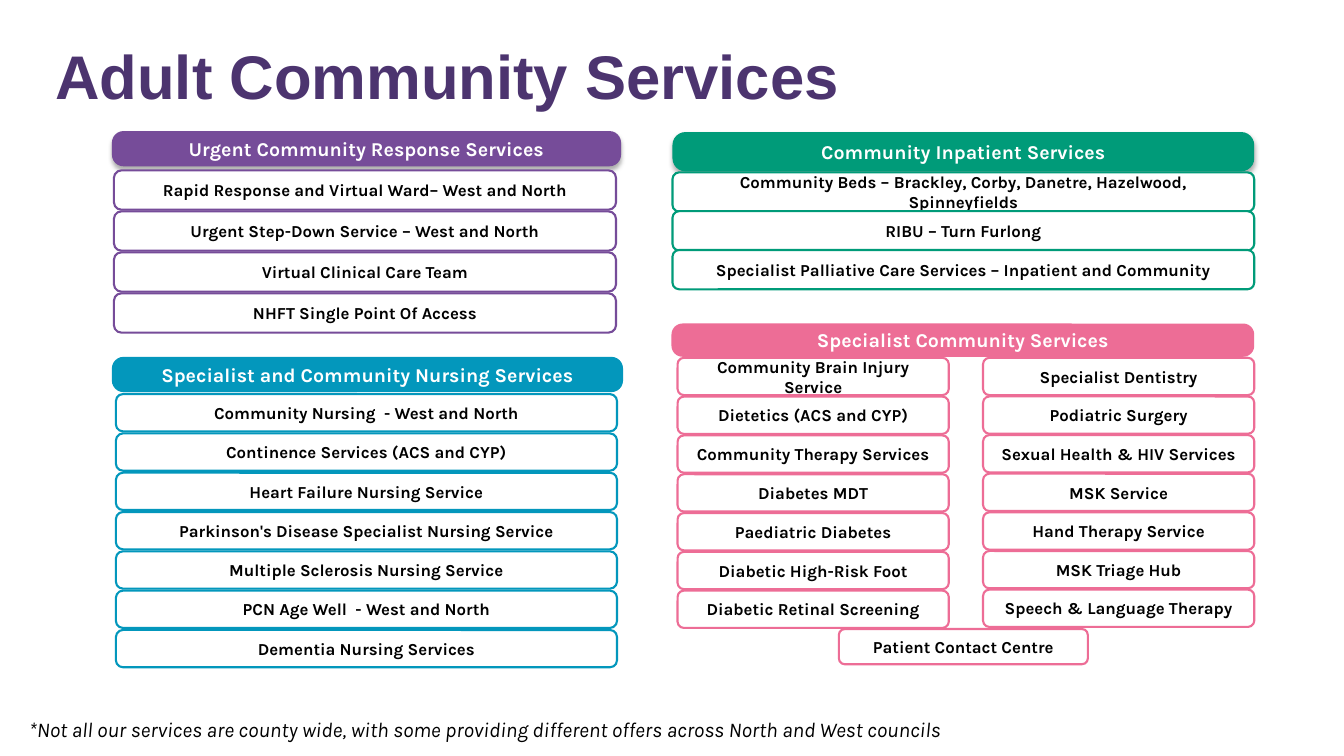
from lxml import etree
from pptx import Presentation
from pptx.dml.color import RGBColor
from pptx.enum.shapes import MSO_SHAPE
from pptx.enum.text import MSO_ANCHOR, PP_ALIGN
from pptx.oxml.ns import qn
from pptx.util import Inches, Pt

ROUND = MSO_SHAPE.ROUNDED_RECTANGLE
MIDDLE = MSO_ANCHOR.MIDDLE
CENTER = PP_ALIGN.CENTER
LEFT = PP_ALIGN.LEFT

WHITE = RGBColor(0xFF, 0xFF, 0xFF)
BLACK = RGBColor(0x00, 0x00, 0x00)
PLUM = RGBColor(0x4C, 0x34, 0x6F)
PURPLE = RGBColor(0x76, 0x4C, 0x99)
BLUE = RGBColor(0x03, 0x97, 0xBC)
GREEN = RGBColor(0x00, 0x9B, 0x79)
PINK = RGBColor(0xED, 0x6D, 0x96)

deck = Presentation()
deck.slide_width = Inches(13.33)
deck.slide_height = Inches(7.5)
slide = deck.slides.add_slide(deck.slide_layouts[6])


def write(shape, text, size, color, font="Karla", align=CENTER):
    frame = shape.text_frame
    frame.word_wrap = True
    para = frame.paragraphs[0]
    para.alignment = align
    run = para.add_run()
    run.text = text
    run.font.name = font
    run.font.size = Pt(size)
    run.font.color.rgb = color
    return run.font


def add_bar(place, curve, fill, line, text, size, color):
    bar = slide.shapes.add_shape(ROUND, *[Inches(n) for n in place])
    bar.adjustments[0] = curve
    bar.shadow.inherit = False
    bar.fill.solid()
    bar.fill.fore_color.rgb = fill
    if line is None:
        bar.line.fill.background()
    else:
        bar.line.color.rgb = line
        bar.line.width = Pt(1.5)
    bar.text_frame.vertical_anchor = MIDDLE
    write(bar, text, size, color).bold = True
    return bar


# Section headers: place, colour, shadow, text
heads = [
    ((1.11, 1.3, 5.05, 0.35), PURPLE, True, "Urgent Community Response Services"),
    ((1.11, 3.54, 5.07, 0.35), BLUE, False, "Specialist and Community Nursing Services"),
    ((6.67, 1.31, 5.77, 0.39), GREEN, True, "Community Inpatient Services"),
    ((6.66, 3.21, 5.78, 0.33), PINK, False, "Specialist Community Services"),
]
for place, color, shade, text in heads:
    bar = add_bar(place, 0.33, color, None, text, 14, WHITE)
    if shade:
        effects = bar._element.spPr.find(qn("a:effectLst"))
        cast = etree.SubElement(effects, qn("a:outerShdw"), blurRad=str(Pt(3.5)),
                                dist=str(Pt(2.2)), dir="5400000", rotWithShape="0")
        tint = etree.SubElement(cast, qn("a:srgbClr"), val="000000")
        etree.SubElement(tint, qn("a:alpha"), val="32000")

# Service stacks: left, width, first top, last top, height, curve, colour, names
stacks = [
    (1.13, 4.98, 1.69, 2.91, 0.39, 0.19, PURPLE, [
        "Rapid Response and Virtual Ward– West and North",
        "Urgent Step-Down Service – West and North",
        "Virtual Clinical Care Team",
        "NHFT Single Point Of Access",
    ]),
    (1.15, 4.97, 3.91, 6.25, 0.37, 0.19, BLUE, [
        "Community Nursing  - West and North",
        "Continence Services (ACS and CYP)",
        "Heart Failure Nursing Service",
        "Parkinson's Disease Specialist Nursing Service",
        "Multiple Sclerosis Nursing Service",
        "PCN Age Well  - West and North",
        "Dementia Nursing Services",
    ]),
    (6.67, 5.77, 1.71, 2.48, 0.39, 0.17, GREEN, [
        "Community Beds – Brackley, Corby, Danetre, Hazelwood, Spinneyfields",
        "RIBU – Turn Furlong",
        "Specialist Palliative Care Services – Inpatient and Community",
    ]),
    (6.72, 2.69, 3.55, 5.86, 0.37, 0.17, PINK, [
        "Community Brain Injury Service",
        "Dietetics (ACS and CYP)",
        "Community Therapy Services",
        "Diabetes MDT",
        "Paediatric Diabetes",
        "Diabetic High-Risk Foot",
        "Diabetic Retinal Screening",
    ]),
    (9.75, 2.69, 3.55, 5.85, 0.37, 0.17, PINK, [
        "Specialist Dentistry",
        "Podiatric Surgery",
        "Sexual Health & HIV Services",
        "MSK Service",
        "Hand Therapy Service",
        "MSK Triage Hub",
        "Speech & Language Therapy",
    ]),
    (8.32, 2.47, 6.24, 6.24, 0.35, 0.17, PINK, ["Patient Contact Centre"]),
]
for left, width, first, last, height, curve, color, names in stacks:
    step = (last - first) / max(len(names) - 1, 1)
    for row, name in enumerate(names):
        place = (left, first + row * step, width, height)
        add_bar(place, curve, WHITE, color, name, 12, BLACK)

# Title
title = slide.shapes.add_textbox(Inches(0.45), Inches(0.33), Inches(12.5), Inches(0.84))
write(title, "Adult Community Services", 44, PLUM, "Arial", LEFT).bold = True

# Footnote
note = slide.shapes.add_textbox(Inches(0.19), Inches(7.06), Inches(13.14), Inches(0.35))
write(note, "*Not all our services are county wide, with some providing different "
      "offers across North and West councils", 15, BLACK, align=LEFT).italic = True

deck.save("out.pptx")
